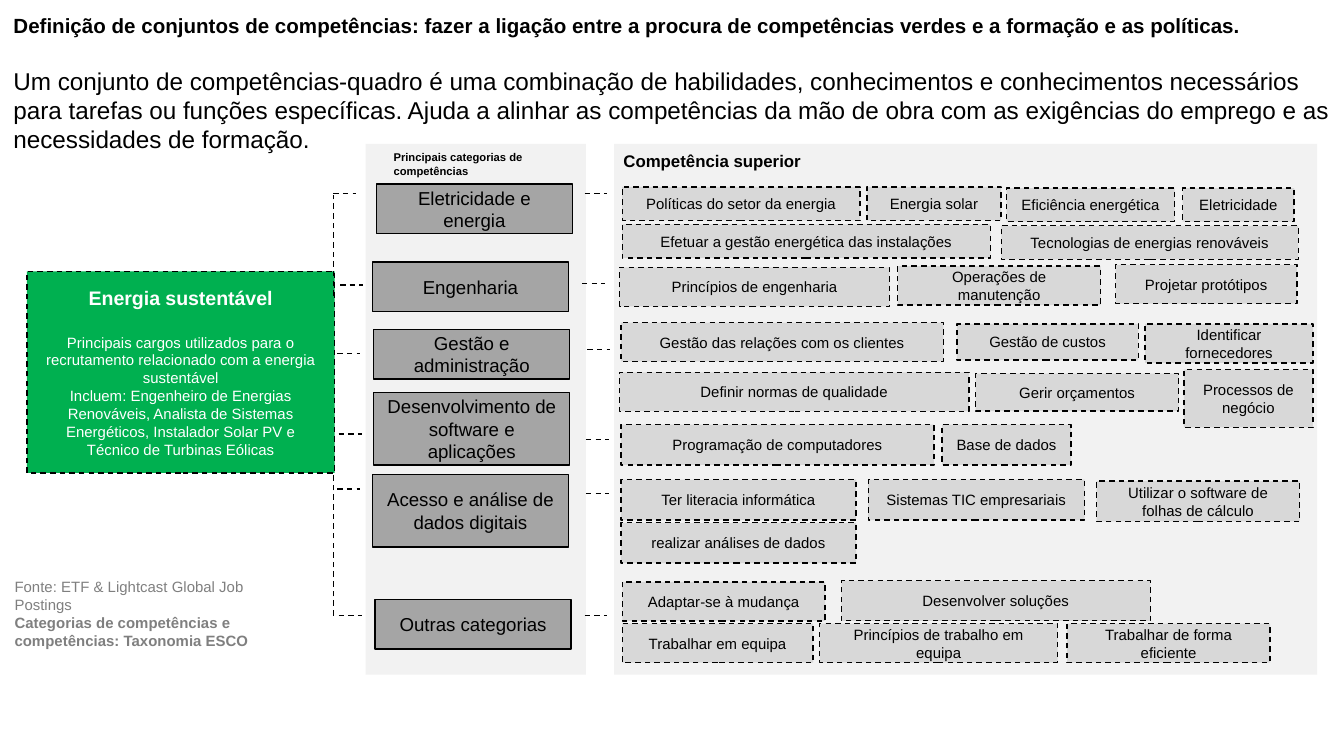
"""Build the slide that links green skill sets to training and policy."""
from lxml import etree
from pptx import Presentation
from pptx import util as u
from pptx.dml.color import RGBColor
from pptx.enum import dml, shapes, text
from pptx.oxml.ns import qn

PX = 9144
FONT = "Arial"
BLACK, WHITE, GREY = "000000", "FFFFFF", "7F7F7F"
PANEL, CATEGORY, SKILL, GREEN = "F2F2F2", "A5A5A5", "D8D8D8", "00B050"
LEFT, CENTER = text.PP_ALIGN.LEFT, text.PP_ALIGN.CENTER

TITLE = [
    ("Definição de conjuntos de competências: fazer a ligação entre a procura de "
     "competências verdes e a formação e as políticas.", 11, True),
    ("Um conjunto de competências-quadro é uma combinação de habilidades, conhecimentos e "
     "conhecimentos necessários para tarefas ou funções específicas. Ajuda a alinhar as "
     "competências da mão de obra com as exigências do emprego e as necessidades de formação.",
     13, False),
]
SECTOR = [
    ("Energia sustentável", 10.5, True),
    ("Principais cargos utilizados para o recrutamento relacionado com a energia sustentável",
     8, False),
    ("Incluem: Engenheiro de Energias Renováveis, Analista de Sistemas Energéticos, "
     "Instalador Solar PV e Técnico de Turbinas Eólicas", 8, False),
]
SOURCE = [
    ("Fonte: ETF & Lightcast Global Job Postings", 8, False),
    ("Categorias de competências e competências: Taxonomia ESCO", 8, True),
]
PANELS = [(457, 107, 523, 395), (272, 107, 164, 395)]
HEADINGS = [
    ("Principais categorias de competências", 6, (283, 107, 138, 30)),
    ("Competência superior", 9, (454, 107, 160, 25)),
]
CATEGORY_WIDTH = 146
CATEGORIES = [
    ("Eletricidade e energia", 280, 137, 37),
    ("Engenharia", 277, 195, 37),
    ("Gestão e administração", 278, 245, 37),
    ("Desenvolvimento de software e aplicações", 278, 292, 54),
    ("Acesso e análise de dados digitais", 277, 353, 54),
    ("Outras categorias", 279, 446, 37),
]
TICK = 17
TICKS = [
    (248, 144), (253, 212), (251, 263), (252, 323), (251, 364), (252, 458),
    (435, 144), (433, 211), (437, 260), (436, 327), (436, 367), (435, 458),
]
TRUNK_X = 248
TRUNKS = [(220, 145), (458, 352)]
SKILLS = [
    ("Políticas do setor da energia", 463, 139, 177, 25),
    ("Energia solar", 645, 139, 100, 25),
    ("Eficiência energética", 749, 140, 125, 25),
    ("Eletricidade", 880, 140, 83, 25),
    ("Efetuar a gestão energética das instalações", 463, 167, 274, 25),
    ("Tecnologias de energias renováveis", 745, 168, 221, 25),
    ("Princípios de engenharia", 461, 199, 201, 29),
    ("Operações de manutenção", 668, 198, 151, 29),
    ("Projetar protótipos", 830, 197, 135, 29),
    ("Gestão das relações com os clientes", 462, 240, 240, 29),
    ("Gestão de custos", 712, 241, 135, 27),
    ("Identificar fornecedores", 852, 241, 125, 29),
    ("Definir normas de qualidade", 461, 277, 260, 29),
    ("Gerir orçamentos", 726, 278, 151, 28),
    ("Processos de negócio", 881, 275, 96, 43),
    ("Programação de computadores", 462, 316, 233, 30),
    ("Base de dados", 701, 316, 96, 30),
    ("Ter literacia informática", 462, 357, 175, 30),
    ("Sistemas TIC empresariais", 646, 357, 161, 30),
    ("Utilizar o software de folhas de cálculo", 816, 358, 151, 30),
    ("realizar análises de dados", 462, 389, 175, 30),
    ("Adaptar-se à mudança", 463, 433, 151, 29),
    ("Desenvolver soluções", 626, 432, 230, 30),
    ("Trabalhar em equipa", 463, 464, 142, 29),
    ("Princípios de trabalho em equipa", 610, 464, 177, 29),
    ("Trabalhar de forma eficiente", 794, 464, 151, 29),
]


def color(value):
    return RGBColor.from_string(value)


def scale(box):
    return [length * PX for length in box]


def write(shape, paragraphs, ink=BLACK, align=LEFT, anchor=text.MSO_ANCHOR.TOP, inset=5):
    frame = shape.text_frame
    frame.word_wrap = True
    frame.auto_size = text.MSO_AUTO_SIZE.NONE
    frame.vertical_anchor = anchor
    frame.margin_left = frame.margin_right = 10 * PX
    frame.margin_top = frame.margin_bottom = inset * PX
    for index, (words, size, bold) in enumerate(paragraphs):
        paragraph = frame.add_paragraph() if index else frame.paragraphs[0]
        paragraph.alignment = align
        run = paragraph.add_run()
        run.text = words
        run.font.name, run.font.size, run.font.bold = FONT, u.Pt(size), bold
        run.font.color.rgb = color(ink)
    return frame


def add_text(slide, box, paragraphs, ink=BLACK):
    write(slide.shapes.add_textbox(*scale(box)), paragraphs, ink)


def set_line(line, dashed):
    line.color.rgb = color(BLACK)
    line.width = u.Pt(0.75)
    if dashed:
        line.dash_style = dml.MSO_LINE.DASH


def add_panel(slide, box, fill):
    shape = slide.shapes.add_shape(shapes.MSO_SHAPE.RECTANGLE, *scale(box))
    shape.shadow.inherit = False
    shape.fill.solid()
    shape.fill.fore_color.rgb = color(fill)
    shape.line.fill.background()
    return shape


def add_box(slide, box, fill, paragraphs, dashed=True, ink=BLACK):
    shape = add_panel(slide, box, fill)
    set_line(shape.line, dashed)
    return write(shape, paragraphs, ink, CENTER, text.MSO_ANCHOR.MIDDLE)


def add_dash(slide, *ends):
    connector = slide.shapes.add_connector(shapes.MSO_CONNECTOR.STRAIGHT, *scale(ends))
    set_line(connector.line, True)
    etree.SubElement(connector._element.spPr, qn("a:effectLst"))


def main():
    presentation = Presentation()
    presentation.slide_width, presentation.slide_height = u.Pt(720), u.Pt(405)
    slide = presentation.slides.add_slide(presentation.slide_layouts[5])

    title = slide.shapes.title
    title.left, title.top, title.width, title.height = scale((0, 0, 1000, 45))
    heading = write(title, TITLE, inset=10)
    heading.paragraphs[1].space_before = u.Pt(15)
    add_text(slide, (1, 425, 219, 64), SOURCE, GREY)

    for box in PANELS:
        add_panel(slide, box, PANEL)
    sector = add_box(slide, (20, 202, 229, 150), GREEN, SECTOR, ink=WHITE)
    sector.paragraphs[1].space_before = u.Pt(12.6)

    for start, end in TRUNKS:
        add_dash(slide, TRUNK_X, start, TRUNK_X, end)
    for left, top in TICKS:
        add_dash(slide, left, top, left + TICK, top)
    for words, size, box in HEADINGS:
        add_text(slide, box, [(words, size, True)])
    for words, left, top, height in CATEGORIES:
        add_box(slide, (left, top, CATEGORY_WIDTH, height), CATEGORY,
                [(words, 10, False)], dashed=False)
    for words, *box in SKILLS:
        add_box(slide, box, SKILL, [(words, 8, False)])

    presentation.save("out.pptx")


if __name__ == "__main__":
    main()
